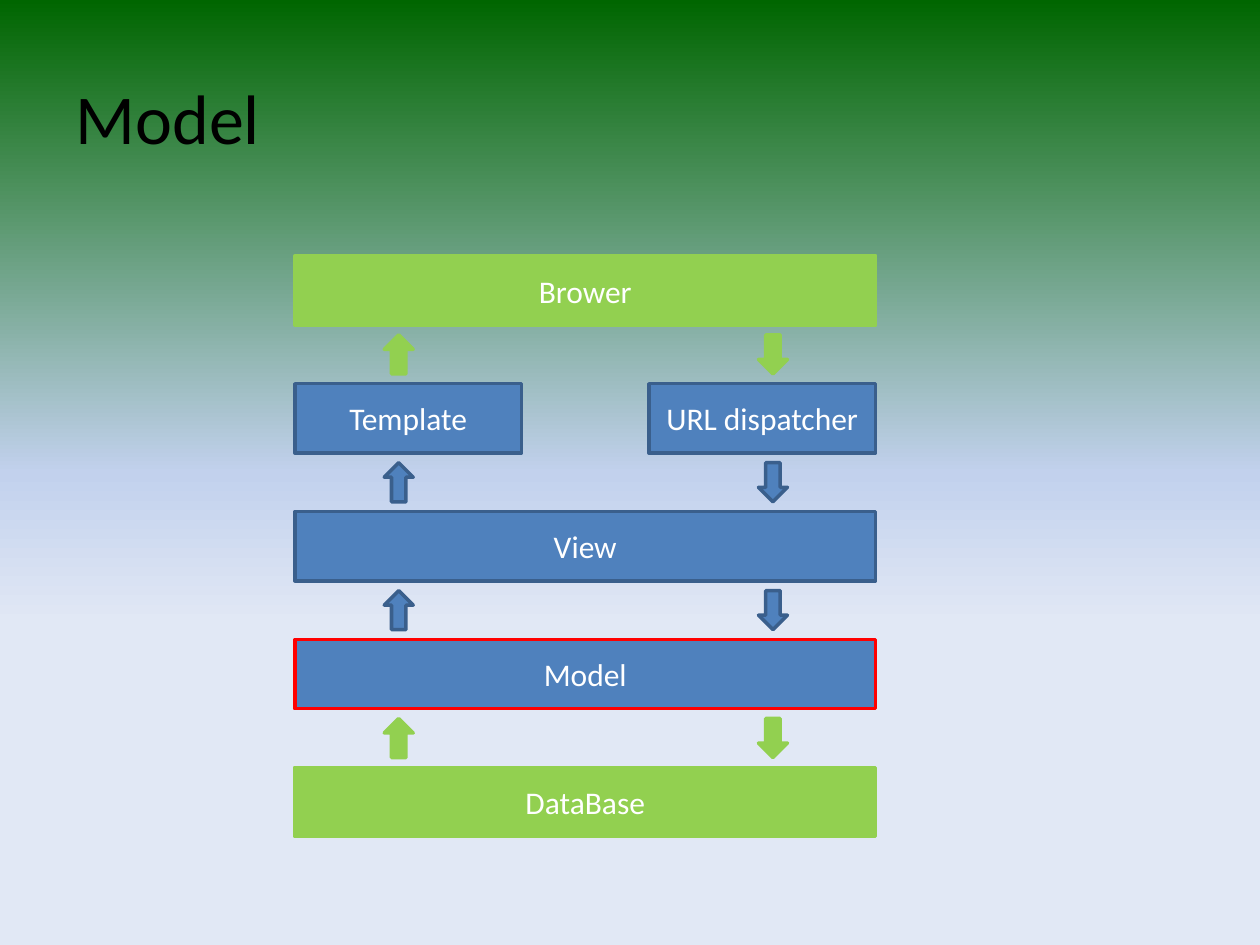
import pptx
import pptx.util
from pptx.dml.color import RGBColor
from pptx.enum.shapes import MSO_SHAPE
from pptx.enum.text import MSO_ANCHOR, PP_ALIGN
from pptx.oxml.ns import qn
from pptx.util import Inches, Pt
import lxml.etree

FONT = "Calibri"
BLACK = RGBColor(0x00, 0x00, 0x00)
WHITE = RGBColor(0xFF, 0xFF, 0xFF)
GREEN = RGBColor(0x92, 0xD0, 0x50)
BLUE = RGBColor(0x4F, 0x81, 0xBD)
DARK_BLUE = RGBColor(0x3A, 0x5F, 0x8C)
RED = RGBColor(0xFF, 0x00, 0x00)

BACKGROUND_STOPS = [
    (0, RGBColor(0x00, 0x66, 0x00)),
    (50, RGBColor(0xC2, 0xD1, 0xED)),
    (66, RGBColor(0xE1, 0xE8, 0xF5)),
]

TITLE = "Model"
# Layers from top to bottom: labels, fill, line
LAYERS = [
    (["Brower"], GREEN, GREEN),
    (["Template", "URL dispatcher"], BLUE, DARK_BLUE),
    (["View"], BLUE, DARK_BLUE),
    (["Model"], BLUE, RED),
    (["DataBase"], GREEN, GREEN),
]
# Fill and line of the arrow pair under each layer but the last
ARROW_PAIRS = [(GREEN, GREEN), (BLUE, DARK_BLUE), (BLUE, DARK_BLUE), (GREEN, GREEN)]
ARROW_COLUMNS = [(MSO_SHAPE.UP_ARROW, 3.05), (MSO_SHAPE.DOWN_ARROW, 6.02)]

STACK_LEFT, STACK_TOP, STACK_WIDTH = 2.34, 2.03, 4.61
LAYER_HEIGHT, LAYER_STEP = 0.55, 1.015
HALF_BOX_WIDTH = 1.8
ARROW_WIDTH, ARROW_HEIGHT = 0.23, 0.31


def paint_background(page):
    fill = page.background.fill
    fill.gradient()
    fill.gradient_angle = 270
    stop_list = next(page.element.iter(qn("a:gsLst")))
    for stop in list(stop_list):
        stop_list.remove(stop)
    for percent, color in BACKGROUND_STOPS:
        stop = lxml.etree.SubElement(stop_list, qn("a:gs"), pos=str(percent * 1000))
        lxml.etree.SubElement(stop, qn("a:srgbClr"), val=str(color))


def add_title(page):
    title = page.shapes.title
    title.left, title.top = Inches(0.5), Inches(0.3)
    title.width, title.height = Inches(9), Inches(1.25)
    title.text_frame.text = TITLE
    title.text_frame.vertical_anchor = MSO_ANCHOR.MIDDLE
    para = title.text_frame.paragraphs[0]
    para.alignment = PP_ALIGN.LEFT
    set_font(para, 40, BLACK)


def set_font(para, size, color):
    para.font.name = FONT
    para.font.size = Pt(size)
    para.font.color.rgb = color


def add_block(page, kind, left, top, width, height, fill, line):
    block = page.shapes.add_shape(
        kind, Inches(left), Inches(top), Inches(width), Inches(height))
    block.shadow.inherit = False
    block.fill.solid()
    block.fill.fore_color.rgb = fill
    block.line.color.rgb = line
    block.line.width = Pt(2)
    return block


def add_layer(page, top, labels, fill, line):
    """Spread the labelled boxes of one layer from edge to edge of the stack."""
    width = STACK_WIDTH if len(labels) == 1 else HALF_BOX_WIDTH
    for index, label in enumerate(labels):
        left = STACK_LEFT + index * (STACK_WIDTH - width)
        box = add_block(page, MSO_SHAPE.RECTANGLE, left, top, width, LAYER_HEIGHT, fill, line)
        box.text_frame.text = label
        box.text_frame.vertical_anchor = MSO_ANCHOR.MIDDLE
        para = box.text_frame.paragraphs[0]
        para.alignment = PP_ALIGN.CENTER
        set_font(para, 18, WHITE)


def main():
    deck = pptx.Presentation()
    deck.slide_width, deck.slide_height = Inches(10), Inches(7.5)
    page = deck.slides.add_slide(deck.slide_layouts.get_by_name("Title Only"))
    paint_background(page)
    add_title(page)

    for row, (labels, fill, line) in enumerate(LAYERS):
        add_layer(page, STACK_TOP + row * LAYER_STEP, labels, fill, line)

    gap = LAYER_STEP - LAYER_HEIGHT
    first_arrow_top = STACK_TOP + LAYER_HEIGHT + (gap - ARROW_HEIGHT) / 2
    for row, (fill, line) in enumerate(ARROW_PAIRS):
        for kind, left in ARROW_COLUMNS:
            add_block(page, kind, left, first_arrow_top + row * LAYER_STEP,
                      ARROW_WIDTH, ARROW_HEIGHT, fill, line)

    deck.save("out.pptx")


if __name__ == "__main__":
    main()
